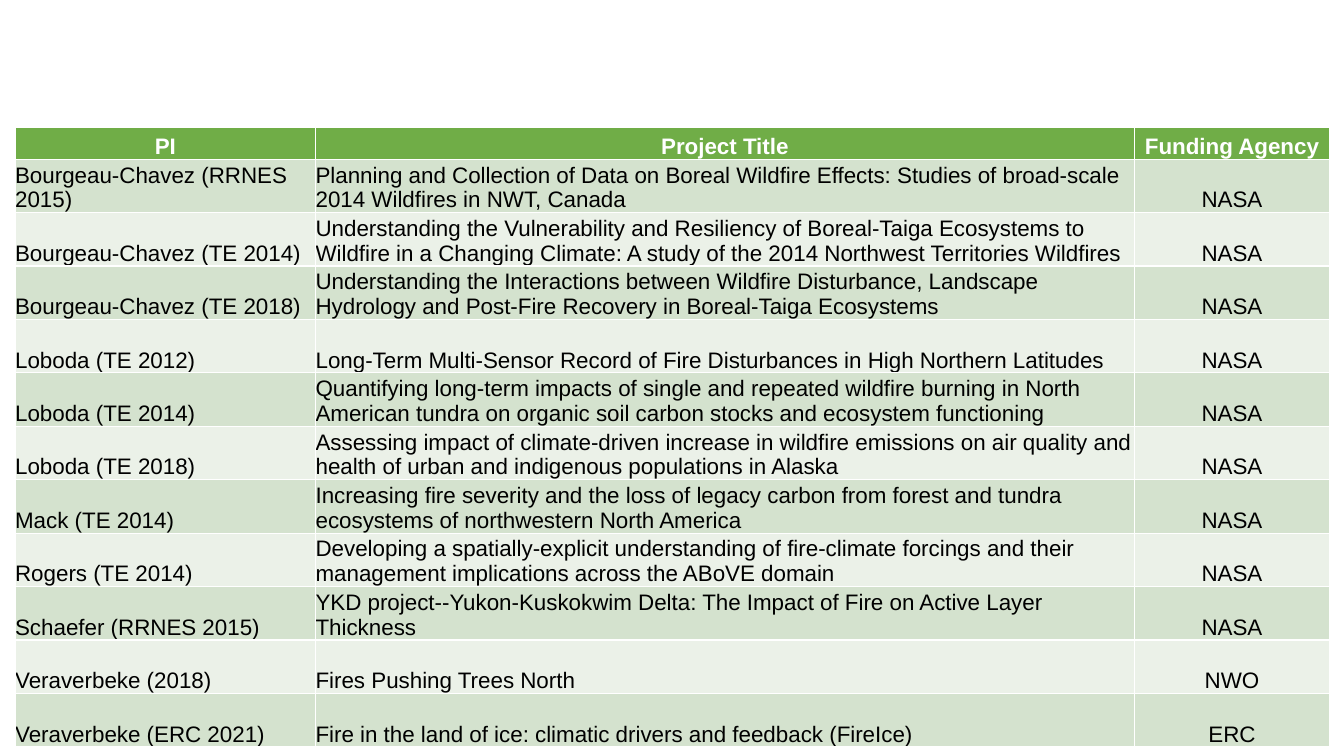
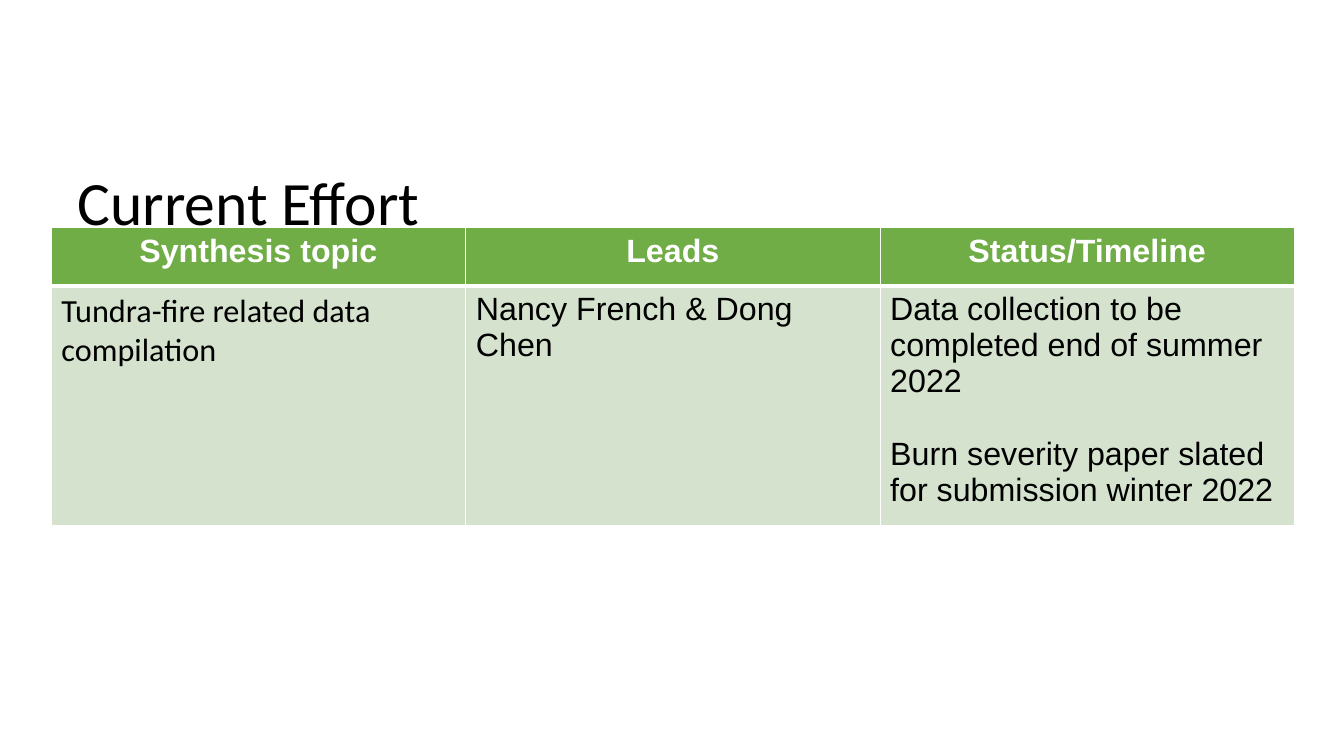
import pptx
import pptx.dml.color
import pptx.enum.text
import pptx.oxml
import pptx.oxml.ns
import pptx.util

PX = 9144
COLORS = {"header": "70AD47", "dark": "D4E2CE", "light": "EBF1E8", "border": "FFFFFF"}
HEADER_FONT = {"name": "Arial", "bold": True, "color": "FFFFFF"}
BODY_FONT = {"name": "Arial", "bold": False, "color": "000000"}
TITLE_FONT = {"name": "Calibri", "size": 44, "bold": False, "color": "000000"}
LEFT = pptx.enum.text.PP_ALIGN.LEFT
CENTER = pptx.enum.text.PP_ALIGN.CENTER
TOP = pptx.enum.text.MSO_ANCHOR.TOP
MIDDLE = pptx.enum.text.MSO_ANCHOR.MIDDLE
BOTTOM = pptx.enum.text.MSO_ANCHOR.BOTTOM

PROJECTS = [
    ["PI", "Project Title", "Funding Agency"],
    ["Bourgeau-Chavez (RRNES 2015)", "Planning and Collection of Data on Boreal Wildfire Effects: Studies of broad-scale 2014 Wildfires in NWT, Canada", "NASA"],
    ["Bourgeau-Chavez (TE 2014)", "Understanding the Vulnerability and Resiliency of Boreal-Taiga Ecosystems to Wildfire in a Changing Climate: A study of the 2014 Northwest Territories Wildfires", "NASA"],
    ["Bourgeau-Chavez (TE 2018)", "Understanding the Interactions between Wildfire Disturbance, Landscape Hydrology and Post-Fire Recovery in Boreal-Taiga Ecosystems", "NASA"],
    ["Loboda (TE 2012)", "Long-Term Multi-Sensor Record of Fire Disturbances in High Northern Latitudes", "NASA"],
    ["Loboda (TE 2014)", "Quantifying long-term impacts of single and repeated wildfire burning in North American tundra on organic soil carbon stocks and ecosystem functioning", "NASA"],
    ["Loboda (TE 2018)", "Assessing impact of climate-driven increase in wildfire emissions on air quality and health of urban and indigenous populations in Alaska", "NASA"],
    ["Mack (TE 2014)", "Increasing fire severity and the loss of legacy carbon from forest and tundra ecosystems of northwestern North America", "NASA"],
    ["Rogers (TE 2014)", "Developing a spatially-explicit understanding of fire-climate forcings and their management implications across the ABoVE domain", "NASA"],
    ["Schaefer (RRNES 2015)", "YKD project--Yukon-Kuskokwim Delta: The Impact of Fire on Active Layer Thickness", "NASA"],
    ["Veraverbeke (2018)", "Fires Pushing Trees North", "NWO"],
    ["Veraverbeke (ERC 2021)", "Fire in the land of ice: climatic drivers and feedback (FireIce)", "ERC"],
]
EFFORTS = [
    ["Synthesis topic", "Leads", "Status/Timeline"],
    ["Tundra-fire related data compilation", "Nancy French & Dong Chen",
     "Data collection to be completed end of summer 2022\nBurn severity paper slated for submission winter 2022"],
]


def px(length):
    return pptx.util.Emu(length * PX)


def rgb(color):
    return pptx.dml.color.RGBColor.from_string(color)


def set_attributes(target, values):
    for name, value in values.items():
        setattr(target, name, value)


def write_text(frame, text, font, paragraph_format, gap=0):
    for index, line in enumerate(text.split("\n")):
        paragraph = frame.paragraphs[0] if index == 0 else frame.add_paragraph()
        set_attributes(paragraph, paragraph_format)
        if index:
            paragraph.space_before = pptx.util.Pt(gap)
        run = paragraph.add_run()
        run.text = line
        set_attributes(run.font, {
            "name": font["name"], "size": pptx.util.Pt(font["size"]), "bold": font["bold"]})
        run.font.color.rgb = rgb(font["color"])


def set_borders(cell, bottom):
    properties = cell._tc.get_or_add_tcPr()
    widths = {"lnL": 1, "lnR": 1, "lnT": 1, "lnB": bottom}
    for position, (side, width) in enumerate(widths.items()):
        properties.insert(position, pptx.oxml.parse_xml(
            f'<a:{side} {pptx.oxml.ns.nsdecls("a")} w="{pptx.util.Pt(width)}"><a:solidFill>'
            f'<a:srgbClr val="{COLORS["border"]}"/></a:solidFill></a:{side}>'))


def add_title(slide, box, text):
    shape = slide.shapes.add_textbox(*map(px, box))
    set_attributes(shape.text_frame, {"word_wrap": True, "vertical_anchor": MIDDLE})
    write_text(shape.text_frame, text, TITLE_FONT, {"line_spacing": 0.9})


def add_grid(slide, box, rows, widths, heights, style):
    shape = slide.shapes.add_table(len(rows), len(widths), *map(px, box))
    table = shape.table
    for column, width in zip(table.columns, widths):
        column.width = px(width)
    for row, height in zip(table.rows, heights):
        row.height = px(height)
    horizontal, vertical = style["margins"]
    cell_format = {
        "margin_left": px(horizontal), "margin_right": px(horizontal),
        "margin_top": px(vertical), "margin_bottom": px(vertical),
        "vertical_anchor": style["anchor"]}
    for row_index, texts in enumerate(rows):
        header = row_index == 0
        band = "header" if header else "dark" if row_index % 2 else "light"
        for column_index, text in enumerate(texts):
            cell = table.cell(row_index, column_index)
            set_attributes(cell, cell_format)
            cell.fill.solid()
            cell.fill.fore_color.rgb = rgb(COLORS[band])
            set_borders(cell, style["header_line"] if header else 1)
            font = dict(HEADER_FONT if header else BODY_FONT, size=style["size"])
            if not header and column_index in style["calibri_columns"]:
                font["name"] = "Calibri"
            centered = header or column_index in style["centered_columns"]
            write_text(cell.text_frame, text, font,
                       {"alignment": CENTER if centered else LEFT}, style["gap"])


def add_blank_slide(presentation):
    return presentation.slides.add_slide(presentation.slide_layouts[6])


def build_projects(presentation):
    slide = add_blank_slide(presentation)
    row_count = len(PROJECTS) - 1
    add_grid(slide, (15, 126, 1304, 615), PROJECTS, [298, 812, 194], [32] + [53] * row_count, {
        "margins": (0, 0), "anchor": BOTTOM, "size": 16, "header_line": 1, "gap": 0,
        "centered_columns": [2], "calibri_columns": []})


def build_efforts(presentation):
    slide = add_blank_slide(presentation)
    add_title(slide, (67, 161, 1199, 86), "Current Effort")
    add_grid(slide, (51, 226, 1233, 286), EFFORTS, [411] * 3, [58, 228], {
        "margins": (10, 5), "anchor": TOP, "size": 23, "header_line": 3, "gap": 26,
        "centered_columns": [], "calibri_columns": [0]})


def main():
    presentation = pptx.Presentation()
    set_attributes(presentation, {"slide_width": px(1333), "slide_height": px(750)})
    build_projects(presentation)
    build_efforts(presentation)
    presentation.save("out.pptx")


if __name__ == "__main__":
    main()
